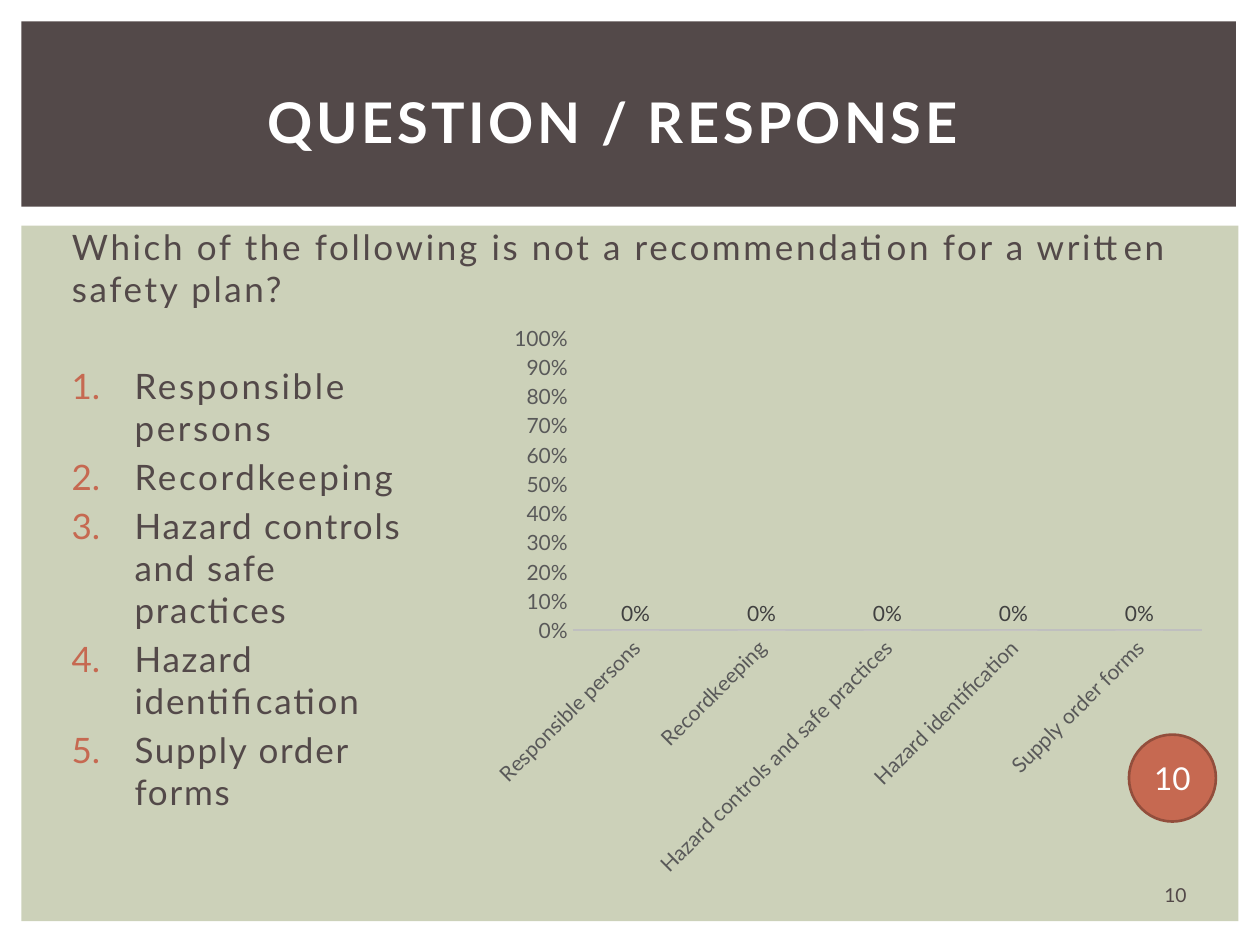
from lxml.etree import SubElement
from pptx import Presentation
from pptx.chart.data import CategoryChartData
from pptx.dml.color import RGBColor
from pptx.enum.chart import XL_CHART_TYPE, XL_LABEL_POSITION, XL_TICK_MARK
from pptx.enum.dml import MSO_PATTERN
from pptx.enum.shapes import MSO_SHAPE
from pptx.enum.text import MSO_ANCHOR, PP_ALIGN
from pptx.oxml.ns import qn
from pptx.util import Inches, Pt

FONT = "Lato"
DARK, GREEN, RUST, RUST_EDGE = "534949", "CCD1B9", "C66951", "924E3C"
WHITE, GREY = "FFFFFF", "595959"
WIDTH, HEIGHT = Inches(10), Inches(7.5)
QUESTION = "Which of the following is not a recommendation for a written safety plan?"
ANSWERS = ["Responsible persons", "Recordkeeping", "Hazard controls and safe practices",
           "Hazard identification", "Supply order forms"]


def color(value):
    """Turn a hex string into a colour."""
    return RGBColor.from_string(value)


def area(left, top, width, height):
    """Turn percentages of the slide into a position and size."""
    return (int(WIDTH * left / 100), int(HEIGHT * top / 100),
            int(WIDTH * width / 100), int(HEIGHT * height / 100))


def apply(target, values):
    """Set each named attribute on the target."""
    for name, value in values.items():
        setattr(target, name, value)


def style_font(font, size, fill, bold=False):
    """Give a font its face, size, weight and colour."""
    apply(font, {"name": FONT, "size": Pt(size), "bold": bold})
    font.color.rgb = color(fill)


def add_panel(page, kind, place, fill, edge=None):
    """Add a filled shape with an optional outline."""
    panel = page.shapes.add_shape(kind, *area(*place))
    panel.shadow.inherit = False
    panel.fill.solid()
    panel.fill.fore_color.rgb = color(fill)
    if edge:
        panel.line.color.rgb = color(edge)
        panel.line.width = Pt(1.5)
    else:
        panel.line.fill.background()
    return panel


def write(para, text, size, fill, bold=False, spacing=0):
    """Add a styled, letter-spaced span of text to a paragraph."""
    span = para.add_run()
    span.text = text
    style_font(span.font, size, fill, bold)
    span.font._element.set("spc", str(int(spacing * 100)))


def add_box(page, place, **frame_values):
    """Add a wrapping text box and return its text frame."""
    frame = page.shapes.add_textbox(*area(*place)).text_frame
    apply(frame, {"word_wrap": True, **frame_values})
    return frame


def number_para(para):
    """Give a paragraph a hanging, coloured automatic number."""
    properties = para._p.get_or_add_pPr()
    properties.set("marL", str(Inches(0.55)))
    properties.set("indent", str(Inches(-0.5)))
    tint = SubElement(properties, qn("a:buClr"))
    SubElement(tint, qn("a:srgbClr")).set("val", RUST)
    SubElement(properties, qn("a:buAutoNum")).set("type", "arabicPeriod")


def add_answers(page, place):
    """Add the numbered answers."""
    frame = add_box(page, place)
    for index, answer in enumerate(ANSWERS):
        para = frame.add_paragraph() if index else frame.paragraphs[0]
        number_para(para)
        if index:
            para.space_before = Pt(4)
        write(para, answer, 20, DARK, spacing=1.5 if index < 2 else 1)


def style_axis(axis):
    """Remove ticks and gridlines and set the label font."""
    apply(axis, {"has_major_gridlines": False, "major_tick_mark": XL_TICK_MARK.NONE,
                 "minor_tick_mark": XL_TICK_MARK.NONE})
    style_font(axis.tick_labels.font, 12, GREY)


def add_result_chart(page, place):
    """Add the column chart of response shares."""
    data = CategoryChartData(number_format="0%")
    data.categories = ANSWERS
    data.add_series("Series 1", [0] * len(ANSWERS))
    chart = page.shapes.add_chart(XL_CHART_TYPE.COLUMN_CLUSTERED, *area(*place), data).chart
    apply(chart, {"has_legend": False, "has_title": False})
    style_font(chart.font, 10, "000000")

    category, value = chart.category_axis, chart.value_axis
    style_axis(category)
    category.format.line.color.rgb = color("BFBFBF")
    category.format.line.width = Pt(1.5)
    category._element.find(qn("c:txPr")).find(qn("a:bodyPr")).set("rot", "-2700000")
    style_axis(value)
    value.format.line.fill.background()
    apply(value, {"minimum_scale": 0, "maximum_scale": 1, "major_unit": 0.1})
    apply(value.tick_labels, {"number_format": "0%", "number_format_is_linked": False})

    plot = chart.plots[0]
    apply(plot, {"gap_width": 164, "overlap": -22, "vary_by_categories": False})
    series = plot.series[0]
    series.format.fill.patterned()
    series.format.fill.pattern = MSO_PATTERN.NARROW_HORIZONTAL
    series.format.fill.fore_color.rgb = color(RUST)
    series.format.fill.back_color.rgb = color("F4E1DC")
    labels = series.data_labels
    apply(labels, {"show_value": True, "position": XL_LABEL_POSITION.OUTSIDE_END,
                   "number_format": "0%", "number_format_is_linked": False})
    style_font(labels.font, 12, "404040")


def add_counter(page, place):
    """Add the round countdown badge."""
    badge = add_panel(page, MSO_SHAPE.OVAL, place, RUST, RUST_EDGE)
    apply(badge.text_frame, {"margin_left": 0, "margin_right": 0, "margin_top": 0,
                             "margin_bottom": 0, "word_wrap": False,
                             "vertical_anchor": MSO_ANCHOR.MIDDLE})
    para = badge.text_frame.paragraphs[0]
    para.alignment = PP_ALIGN.CENTER
    write(para, "10", 18, WHITE)


def main():
    """Build the slide and save the deck."""
    deck = Presentation()
    apply(deck, {"slide_width": WIDTH, "slide_height": HEIGHT})
    page = deck.slides.add_slide(deck.slide_layouts[6])
    add_panel(page, MSO_SHAPE.RECTANGLE, (1.7, 23.87, 96.6, 73.6), GREEN)
    add_panel(page, MSO_SHAPE.RECTANGLE, (1.7, 2.27, 96.4, 19.6), DARK)

    title = add_box(page, (4.2, 5.2, 91.7, 15.33), vertical_anchor=MSO_ANCHOR.MIDDLE,
                    margin_right=Inches(0.38)).paragraphs[0]
    title.alignment = PP_ALIGN.CENTER
    write(title, "QUESTION / RESPONSE", 32, WHITE, bold=True, spacing=2)

    number = add_box(page, (90.1, 92.67, 6.4, 4),
                     vertical_anchor=MSO_ANCHOR.MIDDLE).paragraphs[0]
    number.alignment = PP_ALIGN.CENTER
    write(number, "10", 11, DARK)

    question = add_box(page, (4.2, 23.2, 91.7, 12), margin_left=Inches(0.15)).paragraphs[0]
    write(question, QUESTION, 20, DARK, spacing=1.5)
    add_answers(page, (4.2, 37.87, 31.4, 51.47))
    add_result_chart(page, (38, 33.2, 58.6, 60.8))
    add_counter(page, (89.6, 77.73, 6.9, 9.2))
    deck.save("out.pptx")


if __name__ == "__main__":
    main()
